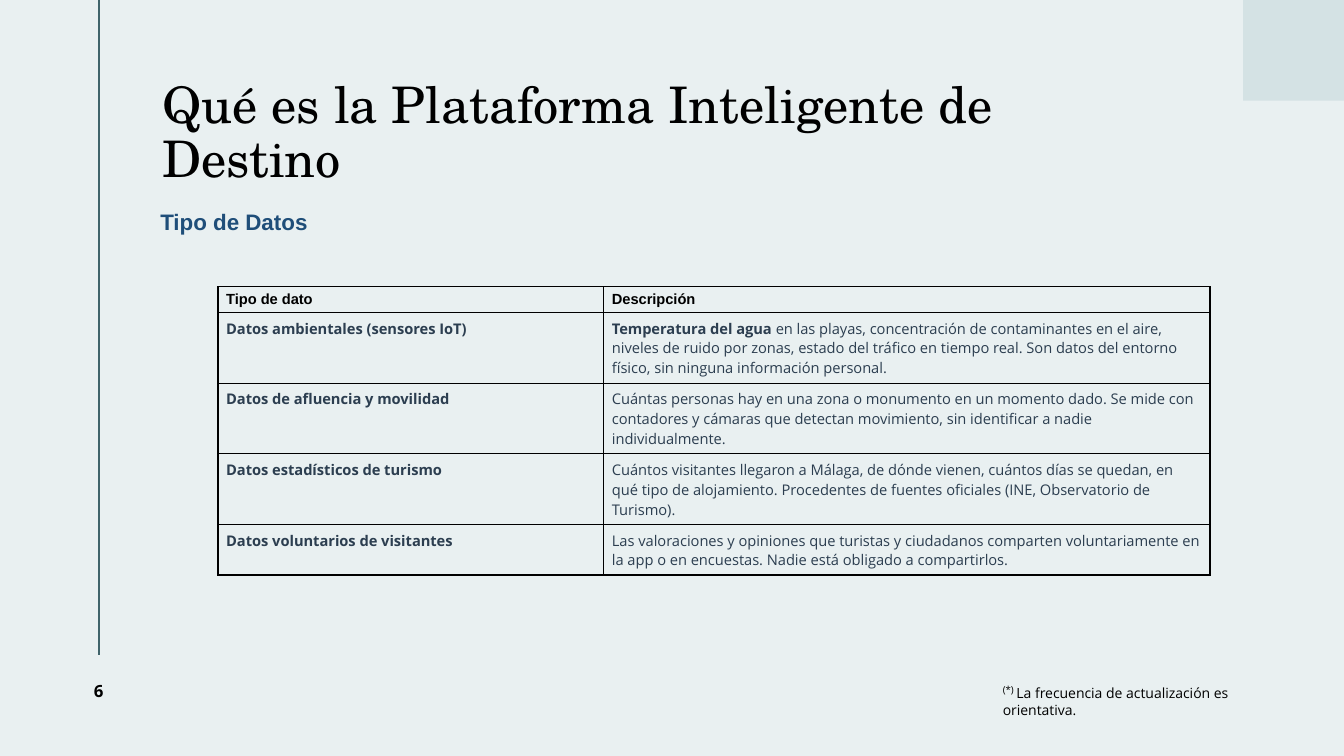
from lxml.etree import SubElement
from pptx import Presentation
from pptx.dml.color import RGBColor
from pptx.enum.shapes import MSO_CONNECTOR, MSO_SHAPE
from pptx.enum.text import MSO_ANCHOR, MSO_AUTO_SIZE, PP_ALIGN
from pptx.oxml import parse_xml
from pptx.oxml.ns import nsdecls, qn
from pptx.util import Pt

BACKGROUND = RGBColor(0xE9, 0xF0, 0xF1)
RULE = RGBColor(0x3F, 0x63, 0x6A)
CORNER = RGBColor(0xD4, 0xE2, 0xE4)
NAVY = RGBColor(0x1F, 0x4E, 0x79)
SLATE = RGBColor(0x2C, 0x3E, 0x50)
BLACK = RGBColor(0, 0, 0)

ROWS = [  # type, bold lead, description, row height
    ("Tipo de dato", "Descripción", "", 17),
    ("Datos ambientales (sensores IoT)", "Temperatura del agua ",
     "en las playas, concentración de contaminantes en el aire, niveles de ruido por zonas, "
     "estado del tráfico en tiempo real. Son datos del entorno físico, sin ninguna información personal.", 50.5),
    ("Datos de afluencia y movilidad", "",
     "Cuántas personas hay en una zona o monumento en un momento dado. Se mide con contadores "
     "y cámaras que detectan movimiento, sin identificar a nadie individualmente.", 50.5),
    ("Datos estadísticos de turismo", "",
     "Cuántos visitantes llegaron a Málaga, de dónde vienen, cuántos días se quedan, en qué tipo "
     "de alojamiento. Procedentes de fuentes oficiales (INE, Observatorio de Turismo).", 50.5),
    ("Datos voluntarios de visitantes", "",
     "Las valoraciones y opiniones que turistas y ciudadanos comparten voluntariamente en la app "
     "o en encuestas. Nadie está obligado a compartirlos.", 36),
]


def place(shape, left, top, width, height):
    shape.left, shape.top, shape.width, shape.height = Pt(left), Pt(top), Pt(width), Pt(height)


def style(font, name, size, color, bold=False):
    font.name, font.size, font.bold = name, Pt(size), bold
    font.color.rgb = color


prs = Presentation()
prs.slide_width, prs.slide_height = Pt(960), Pt(540)
slide = prs.slides.add_slide(prs.slide_layouts[1])
slide.background.fill.solid()
slide.background.fill.fore_color.rgb = BACKGROUND

# Decoration
rule = slide.shapes.add_connector(MSO_CONNECTOR.STRAIGHT, Pt(70.6), 0, Pt(70.6), Pt(468))
rule.line.color.rgb = RULE
rule.line.width = Pt(1.5)
SubElement(rule._element.spPr, qn("a:effectLst"))

corner = slide.shapes.add_shape(MSO_SHAPE.RECTANGLE, Pt(888), 0, Pt(72), Pt(72))
corner.shadow.inherit = False
corner.fill.solid()
corner.fill.fore_color.rgb = CORNER
corner.line.fill.background()

# Title and subtitle
title = slide.shapes.title
place(title, 115.9, 39.6, 720.7, 112.3)
title.text_frame.text = "Qué es la Plataforma Inteligente de Destino"
title.text_frame.auto_size = MSO_AUTO_SIZE.NONE
title.text_frame.vertical_anchor = MSO_ANCHOR.MIDDLE
title.text_frame.margin_left = 0
heading = title.text_frame.paragraphs[0]
heading.alignment = PP_ALIGN.LEFT
heading.line_spacing = 0.9
style(heading.font, "TeX Gyre Schola", 36, BLACK)

subtitle = slide.placeholders[1]
place(subtitle, 114.5, 149, 813.6, 324.7)
frame = subtitle.text_frame
frame.text = "Tipo de Datos"
frame.auto_size = MSO_AUTO_SIZE.NONE
frame.margin_left = frame.margin_top = frame.margin_right = frame.margin_bottom = 0
subheading = frame.paragraphs[0]
subheading.space_before = Pt(0)
properties = subheading._p.get_or_add_pPr()
properties.set("marL", "0")
properties.set("indent", "0")
SubElement(properties, qn("a:buNone"))
style(subheading.font, "Arial", 16, NAVY, True)

# Page number and footnote
page_number = slide.shapes.add_textbox(Pt(32.4), Pt(468), Pt(76.3), Pt(51.1)).text_frame
page_number.word_wrap = True
page_number.vertical_anchor = MSO_ANCHOR.MIDDLE
number = page_number.paragraphs[0]
number.alignment = PP_ALIGN.CENTER
digit = number.add_run()
digit.text = "6"
style(number.font, "Open Sans", 12, BLACK, True)
digit._r.get_or_add_rPr().set("spc", "150")

footnote = slide.shapes.add_textbox(Pt(709.2), Pt(483.1), Pt(225.4), Pt(21.6)).text_frame
footnote.word_wrap = True
note = footnote.paragraphs[0]
for text, size in (("(*) ", 12), ("La frecuencia de actualización es orientativa.", 10)):
    run = note.add_run()
    run.text = text
    style(run.font, "Open Sans", size, BLACK)
note.runs[0]._r.get_or_add_rPr().set("baseline", "30000")

# Data types
table = slide.shapes.add_table(len(ROWS), 2, Pt(155.8), Pt(204.8), Pt(708.5), Pt(204.5)).table
table.first_row = table.horz_banding = False
table.columns[0].width, table.columns[1].width = Pt(275.5), Pt(433)
for r, (kind, lead, description, height) in enumerate(ROWS):
    table.rows[r].height = Pt(height)
    header = r == 0
    for c, runs in enumerate([[(kind, True)], [(lead, True), (description, False)]]):
        cell = table.cell(r, c)
        cell.fill.background()
        cell.margin_left = cell.margin_right = Pt(5.8)
        cell.margin_top = cell.margin_bottom = Pt(2.9 if header else 4.3)
        paragraph = cell.text_frame.paragraphs[0]
        for text, bold in runs:
            if text:
                run = paragraph.add_run()
                run.text = text
                style(run.font, "Arial" if header else "Open Sans", 10.5,
                      BLACK if header else SLATE, bold)
        heavy = {"L": c == 0, "R": False, "T": False, "B": r == len(ROWS) - 1}
        for position, (side, thick) in enumerate(heavy.items()):
            width = Pt(1.5 if thick else 1)
            cell._tc.get_or_add_tcPr().insert(position, parse_xml(
                f'<a:ln{side} {nsdecls("a")} w="{width}"><a:solidFill>'
                f'<a:srgbClr val="{BLACK}"/></a:solidFill></a:ln{side}>'))

prs.save("out.pptx")
